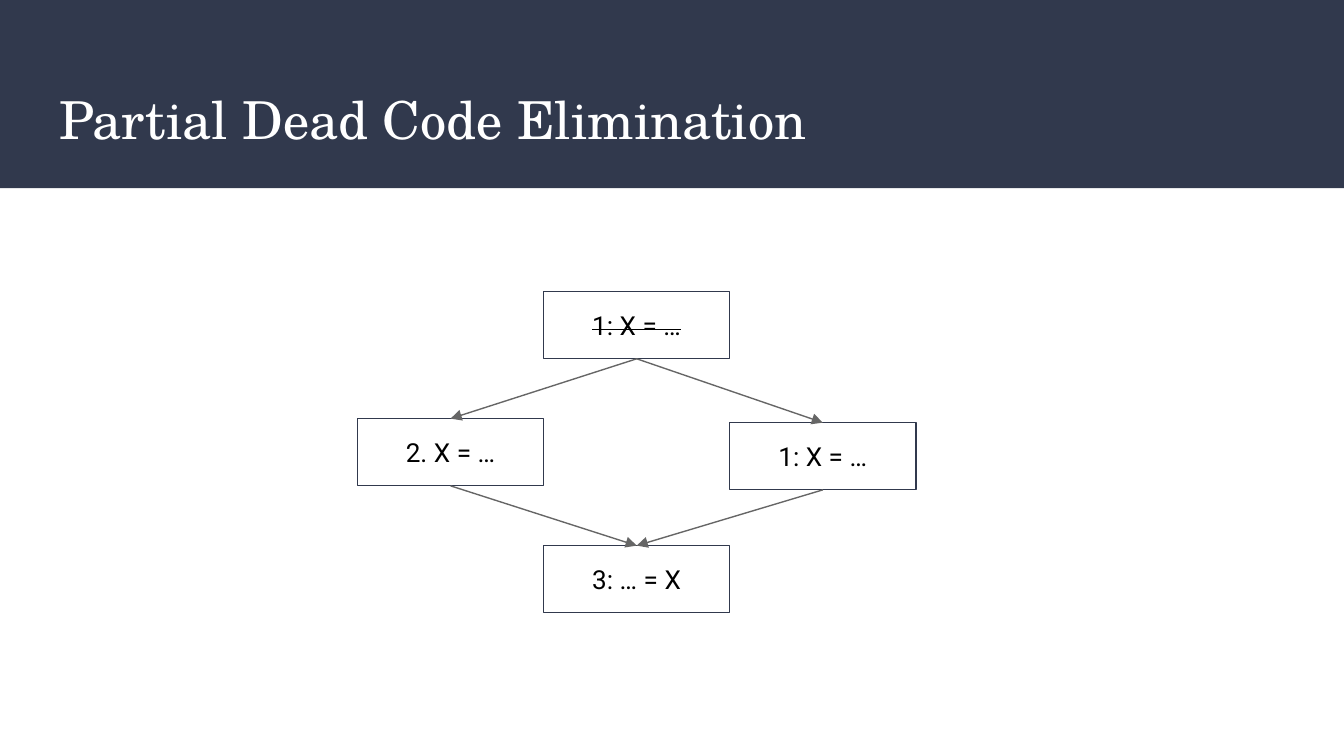
from lxml import etree
from pptx import Presentation
from pptx.dml.color import RGBColor
from pptx.enum.shapes import MSO_CONNECTOR, MSO_SHAPE
from pptx.enum.text import MSO_ANCHOR, MSO_AUTO_SIZE, PP_ALIGN
from pptx.oxml.ns import qn
from pptx.util import Inches, Pt

NAVY = RGBColor(0x31, 0x39, 0x4D)
GRAY = RGBColor(0x66, 0x66, 0x66)
WHITE = RGBColor(0xFF, 0xFF, 0xFF)
BLACK = RGBColor(0x00, 0x00, 0x00)

RECTANGLE = MSO_SHAPE.RECTANGLE
STRAIGHT = MSO_CONNECTOR.STRAIGHT
TOP, MIDDLE = MSO_ANCHOR.TOP, MSO_ANCHOR.MIDDLE
LEFT, CENTER = PP_ALIGN.LEFT, PP_ALIGN.CENTER
NO_AUTOFIT = MSO_AUTO_SIZE.NONE
TOP_SITE, BOTTOM_SITE = 0, 2

# Grid of the flow graph, in inches
GRID_LEFT, GRID_TOP = 2.66, 2.17
COLUMN, ROW = 2.77 / 2, 1.89 / 2
NODE_HEIGHT = 0.5

TITLE_FONT = {"name": "TeX Gyre Schola", "size": Pt(28), "bold": False}
NODE_FONT = {"name": "Roboto", "size": Pt(14)}
FRAME = {
    "word_wrap": True, "auto_size": NO_AUTOFIT,
    "margin_left": Inches(0.1), "margin_right": Inches(0.1),
    "margin_top": Inches(0.1), "margin_bottom": Inches(0.1),
}


def write(shape, text, font, color, alignment, anchor):
    """Put one formatted paragraph into a shape."""
    for name, value in FRAME.items():
        setattr(shape.text_frame, name, value)
    shape.text_frame.vertical_anchor = anchor
    para = shape.text_frame.paragraphs[0]
    para.alignment = alignment
    span = para.add_run()
    span.text = text
    for name, value in font.items():
        setattr(span.font, name, value)
    span.font.color.rgb = color


def add_box(left, top, width, height, fill):
    """Add a flat rectangle, measured in inches."""
    box = page.shapes.add_shape(
        RECTANGLE, Inches(left), Inches(top), Inches(width), Inches(height))
    box.shadow.inherit = False
    box.fill.solid()
    box.fill.fore_color.rgb = fill
    return box


# Widescreen page, 16:9
deck = Presentation()
deck.slide_width = Inches(10)
deck.slide_height = deck.slide_width * 9 // 16
page = deck.slides.add_slide(deck.slide_layouts[5])

# Header band, behind the title
title = page.shapes.title
band = add_box(0, 0, 10, 1.4, NAVY)
band.line.fill.background()
title.element.addprevious(band.element)

title.left, title.top = Inches(0.34), Inches(0.55)
title.width, title.height = Inches(9.32), Inches(0.68)
write(title, "Partial Dead Code Elimination", TITLE_FONT, WHITE, LEFT, TOP)

# Code blocks: text, column, row, extra drop, struck out
blocks = {
    "entry": ("1: X = …", 1, 0, 0, True),
    "right": ("1: X = …", 2, 1, 0.03, False),
    "left": ("2. X = …", 0, 1, 0, False),
    "exit": ("3: … = X", 1, 2, 0, False),
}
nodes = {}
for key, (text, column, row, drop, struck) in blocks.items():
    node = add_box(GRID_LEFT + column * COLUMN, GRID_TOP + row * ROW + drop,
                   COLUMN, NODE_HEIGHT, WHITE)
    node.line.color.rgb = NAVY
    node.line.width = Pt(0.75)
    write(node, text, NODE_FONT, BLACK, CENTER, MIDDLE)
    if struck:
        for run_format in node.element.iter(qn("a:rPr")):
            run_format.set("strike", "sngStrike")
    nodes[key] = node

# Control-flow arrows
for source, target in (("entry", "left"), ("entry", "right"),
                       ("left", "exit"), ("right", "exit")):
    arrow = page.shapes.add_connector(STRAIGHT, 0, 0, 0, 0)
    arrow.begin_connect(nodes[source], BOTTOM_SITE)
    arrow.end_connect(nodes[target], TOP_SITE)
    arrow.line.color.rgb = GRAY
    arrow.line.width = Pt(0.75)
    properties = arrow.element.spPr
    etree.SubElement(properties.find(qn("a:ln")), qn("a:tailEnd"), type="triangle")
    etree.SubElement(properties, qn("a:effectLst"))

deck.save("out.pptx")
